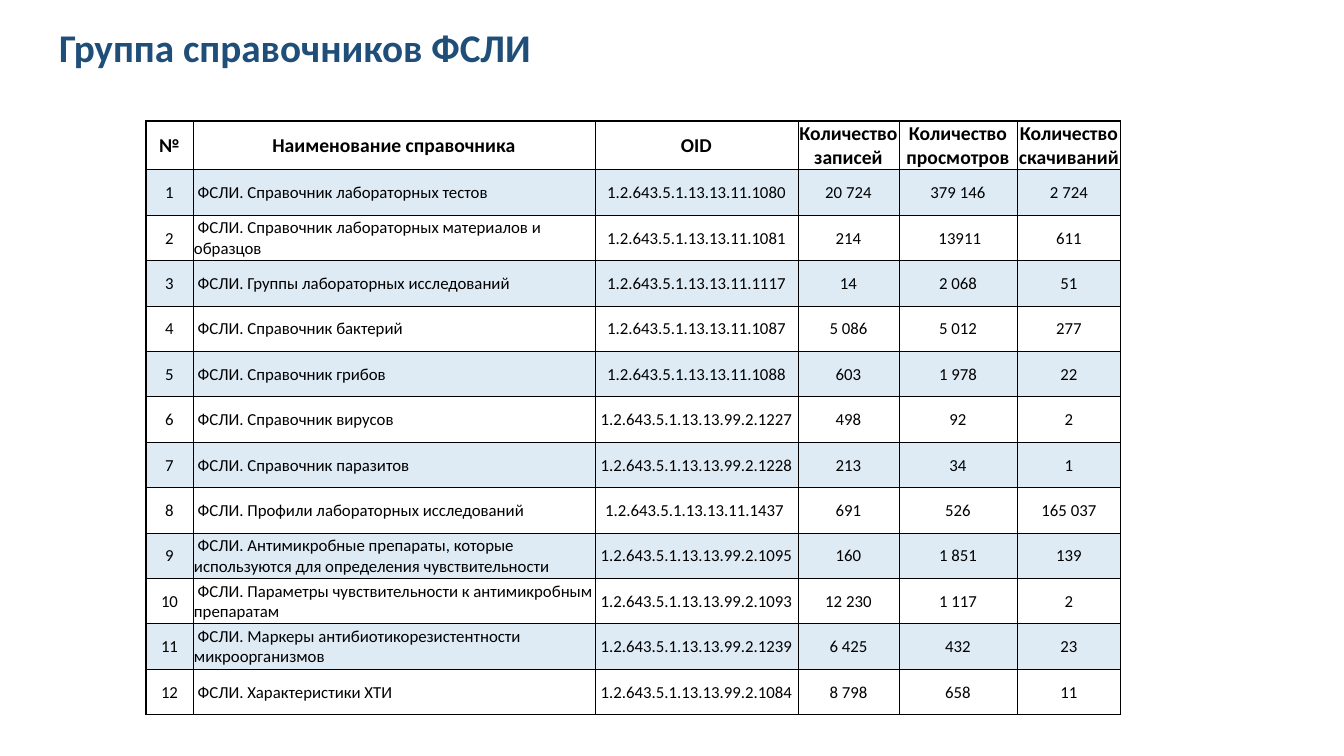
from dataclasses import dataclass

from lxml.etree import SubElement
from pptx import Presentation
from pptx.dml.color import RGBColor
from pptx.enum.text import MSO_ANCHOR as Anchor, PP_ALIGN as Align
from pptx.oxml.ns import qn
from pptx.util import Pt

PX = 914400 / 100.8


def px(length):
    return round(length * PX)


@dataclass(frozen=True)
class Theme:
    font: str = "Calibri"
    title: str = "1F4E79"
    text: str = "000000"
    grid: str = "000000"
    band: str = "DEEBF5"
    title_size: int = 28
    header_size: int = 14
    body_size: int = 12
    inner_line: float = 0.5
    outer_line: float = 1


THEME = Theme()
COLUMN_WIDTHS = [47, 402, 203, 101, 118, 104]
HEADER_HEIGHT = 47
NAME_COLUMN = 1
HEADERS = ["№", "Наименование справочника", "OID", "Количество записей",
           "Количество просмотров", "Количество скачиваний"]
# Name, OID, records, views, downloads
DIRECTORIES = [
    ("Справочник лабораторных тестов", "1.2.643.5.1.13.13.11.1080", "20 724", "379 146", "2 724"),
    ("Справочник лабораторных материалов и образцов", "1.2.643.5.1.13.13.11.1081",
     "214", " 13911", "611"),
    ("Группы лабораторных исследований", "1.2.643.5.1.13.13.11.1117", "14", "2 068", "51"),
    ("Справочник бактерий", "1.2.643.5.1.13.13.11.1087", "5 086", "5 012", "277"),
    ("Справочник грибов", "1.2.643.5.1.13.13.11.1088", "603", "1 978", "22"),
    ("Справочник вирусов", "1.2.643.5.1.13.13.99.2.1227", "498", "92", "2"),
    ("Справочник паразитов", "1.2.643.5.1.13.13.99.2.1228", "213", "34", "1"),
    ("Профили лабораторных исследований", "1.2.643.5.1.13.13.11.1437 ",
     "691", "526", "165 037"),
    ("Антимикробные препараты, которые используются для определения чувствительности",
     "1.2.643.5.1.13.13.99.2.1095", "160", "1 851", "139"),
    ("Параметры чувствительности к антимикробным препаратам",
     "1.2.643.5.1.13.13.99.2.1093", "12 230", "1 117", "2"),
    ("Маркеры антибиотикорезистентности микроорганизмов",
     "1.2.643.5.1.13.13.99.2.1239", "6 425", "432", "23"),
    ("Характеристики ХТИ", "1.2.643.5.1.13.13.99.2.1084", "8 798", "658", "11"),
]


def style_paragraph(paragraph, size, color, bold, align):
    paragraph.alignment = align
    font = paragraph.font
    font.name, font.size, font.bold = THEME.font, Pt(size), bold
    font.color.rgb = RGBColor.from_string(color)


def set_borders(cell, outer_sides):
    """Draw all four sides, heavier on the table's outer edge."""
    properties = cell._tc.get_or_add_tcPr()
    for position, side in enumerate("LRTB"):
        width = THEME.outer_line if side in outer_sides else THEME.inner_line
        line = SubElement(properties, qn(f"a:ln{side}"), w=str(Pt(width)))
        fill = SubElement(line, qn("a:solidFill"))
        SubElement(fill, qn("a:srgbClr"), val=THEME.grid)
        properties.insert(position, line)  # borders precede the cell fill


def add_title(slide, left, top, width, height):
    title = slide.shapes.title
    title.left, title.top, title.width, title.height = map(px, (left, top, width, height))
    frame = title.text_frame
    frame.word_wrap = True
    frame.vertical_anchor = Anchor.TOP
    frame.text = "Группа справочников ФСЛИ"
    style_paragraph(frame.paragraphs[0], THEME.title_size, THEME.title, True, Align.LEFT)


def fill_cell(cell, text, row, column):
    cell.text = text
    cell.vertical_anchor = Anchor.MIDDLE
    cell.margin_left = cell.margin_right = cell.margin_top = px(1)
    cell.margin_bottom = 0
    is_header = row == 0
    align = Align.LEFT if column == NAME_COLUMN and not is_header else Align.CENTER
    size = THEME.header_size if is_header else THEME.body_size
    style_paragraph(cell.text_frame.paragraphs[0], size, THEME.text, is_header, align)
    if row % 2:
        cell.fill.solid()
        cell.fill.fore_color.rgb = RGBColor.from_string(THEME.band)
    else:
        cell.fill.background()


def add_directory_table(slide, left, top, width, height):
    rows = [HEADERS]
    for number, (name, *values) in enumerate(DIRECTORIES, 1):
        rows.append([str(number), f" ФСЛИ. {name}", *values])
    last_row, last_column = len(rows) - 1, len(HEADERS) - 1

    table = slide.shapes.add_table(len(rows), len(HEADERS),
                                   *map(px, (left, top, width, height))).table
    table.first_row = table.horz_banding = False
    for column, share in zip(table.columns, COLUMN_WIDTHS):
        column.width = px(width * share / sum(COLUMN_WIDTHS))
    for r, texts in enumerate(rows):
        table.rows[r].height = px((height - HEADER_HEIGHT) / last_row if r else HEADER_HEIGHT)
        for c, text in enumerate(texts):
            cell = table.cell(r, c)
            fill_cell(cell, text, r, c)
            edges = {"L": c == 0, "R": c == last_column, "T": r == 0, "B": r == last_row}
            set_borders(cell, [side for side, is_outer in edges.items() if is_outer])


def main():
    deck = Presentation()
    deck.slide_width, deck.slide_height = px(1344), px(756)
    slide = deck.slides.add_slide(deck.slide_layouts[5])
    add_title(slide, 49, 18, 1244, 57)
    add_directory_table(slide, 146, 121, 975, 592)
    deck.save("out.pptx")


if __name__ == "__main__":
    main()
